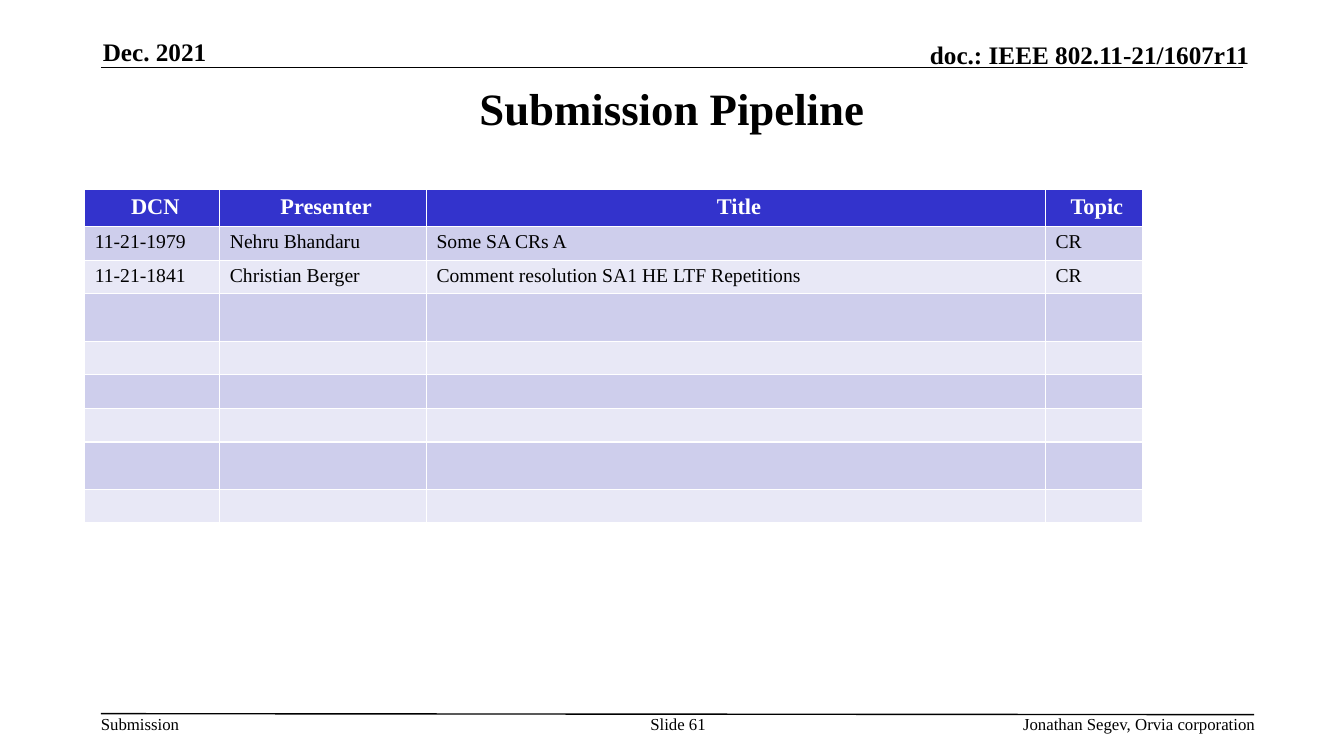
from lxml.etree import SubElement
from pptx import Presentation
from pptx.dml.color import RGBColor
from pptx.enum.shapes import MSO_CONNECTOR as CONN
from pptx.enum.text import MSO_ANCHOR as ANCHOR, PP_ALIGN as ALIGN
from pptx.oxml.ns import qn
from pptx.util import Inches, Pt

FONT = "Times New Roman"
BLACK, WHITE = "000000", "FFFFFF"
HEADER_FILL, BAND_FILLS = "3333CC", ("CECEEC", "E8E8F6")

LABELS = [
    ("Dec. 2021", (1.02, 0.36, 2.73, 0.3), 18, True, ALIGN.LEFT, ANCHOR.BOTTOM),
    ("doc.: IEEE 802.11-21/1607r11", (7.29, 0.39, 5.1, 0.3), 18, True, ALIGN.RIGHT, ANCHOR.BOTTOM),
    ("Submission Pipeline", (1, 0.75, 11.33, 0.64), 32, True, ALIGN.CENTER, ANCHOR.MIDDLE),
    ("Submission", (1, 7.08, 0.79, 0.2), 12, False, ALIGN.LEFT, ANCHOR.TOP),
    ("Slide 61", (6.34, 7.08, 0.77, 0.4), 12, False, ALIGN.CENTER, ANCHOR.TOP),
    ("Jonathan Segev, Orvia corporation", (7.81, 7.08, 4.64, 0.2), 12, False, ALIGN.RIGHT, ANCHOR.TOP),
]
RULES = [(1, 0.67, 12.33, 0.67), (1, 7.08, 12.44, 7.09)]

HEADERS = ["DCN", "Presenter", "Title", "Topic"]
SUBMISSIONS = [
    ["11-21-1979", "Nehru Bhandaru", "Some SA CRs A", "CR"],
    ["11-21-1841", "Christian Berger", "Comment resolution SA1 HE LTF Repetitions", "CR"],
]
COL_WIDTHS = [1.34, 2.05, 6.14, 0.96]
ROW_HEIGHTS = [0.33, 0.32, 0.32, 0.47, 0.32, 0.32, 0.31, 0.47, 0.31]
TABLE_LEFT, TABLE_TOP = 0.84, 1.88


def rgb(value):
    return RGBColor.from_string(value)


def style(p, size, color, bold, align):
    p.alignment = align
    p.font.name = FONT
    p.font.size = Pt(size)
    p.font.bold = bold
    p.font.color.rgb = rgb(color)


def add_label(s, text, box, size, bold, align, anchor):
    tf = s.shapes.add_textbox(*map(Inches, box)).text_frame
    tf.word_wrap = text != "Submission"
    tf.vertical_anchor = anchor
    tf.margin_left = tf.margin_right = tf.margin_top = tf.margin_bottom = 0
    p = tf.paragraphs[0]
    p.text = text
    style(p, size, BLACK, bold, align)


def add_rule(s, *ends):
    line = s.shapes.add_connector(CONN.STRAIGHT, *map(Inches, ends))
    line.line.color.rgb = rgb(BLACK)
    line.line.width = Pt(1)
    SubElement(line._element.spPr, qn("a:effectLst"))


def fill_cell(cell, text, row):
    is_header = row == 0
    cell.fill.solid()
    cell.fill.fore_color.rgb = rgb(HEADER_FILL if is_header else BAND_FILLS[(row - 1) % 2])
    cell.margin_left = Inches(0.1)
    cell.margin_right = Inches(0.04 if is_header else 0.1)
    cell.margin_top = cell.margin_bottom = Inches(0.05)
    p = cell.text_frame.paragraphs[0]
    if text:
        p.text = text
    else:
        SubElement(p._p, qn("a:endParaRPr"), sz="1400")
    if is_header:
        style(p, 16, WHITE, True, ALIGN.CENTER)
    else:
        style(p, 14, BLACK, False, ALIGN.LEFT)


def add_submissions(s):
    rows, cols = len(ROW_HEIGHTS), len(COL_WIDTHS)
    size = sum(COL_WIDTHS), sum(ROW_HEIGHTS)
    table = s.shapes.add_table(rows, cols, *map(Inches, (TABLE_LEFT, TABLE_TOP, *size))).table
    for column, width in zip(table.columns, COL_WIDTHS):
        column.width = Inches(width)
    filled = [HEADERS, *SUBMISSIONS]
    contents = filled + [[""] * cols] * (rows - len(filled))
    for i, (row, height, texts) in enumerate(zip(table.rows, ROW_HEIGHTS, contents)):
        row.height = Inches(height)
        for cell, text in zip(row.cells, texts):
            fill_cell(cell, text, i)


def main():
    prs = Presentation()
    prs.slide_width, prs.slide_height = Inches(13.33), Inches(7.5)
    s = prs.slides.add_slide(prs.slide_layouts[6])
    for rule in RULES:
        add_rule(s, *rule)
    for label in LABELS:
        add_label(s, *label)
    add_submissions(s)
    prs.save("out.pptx")


if __name__ == "__main__":
    main()
